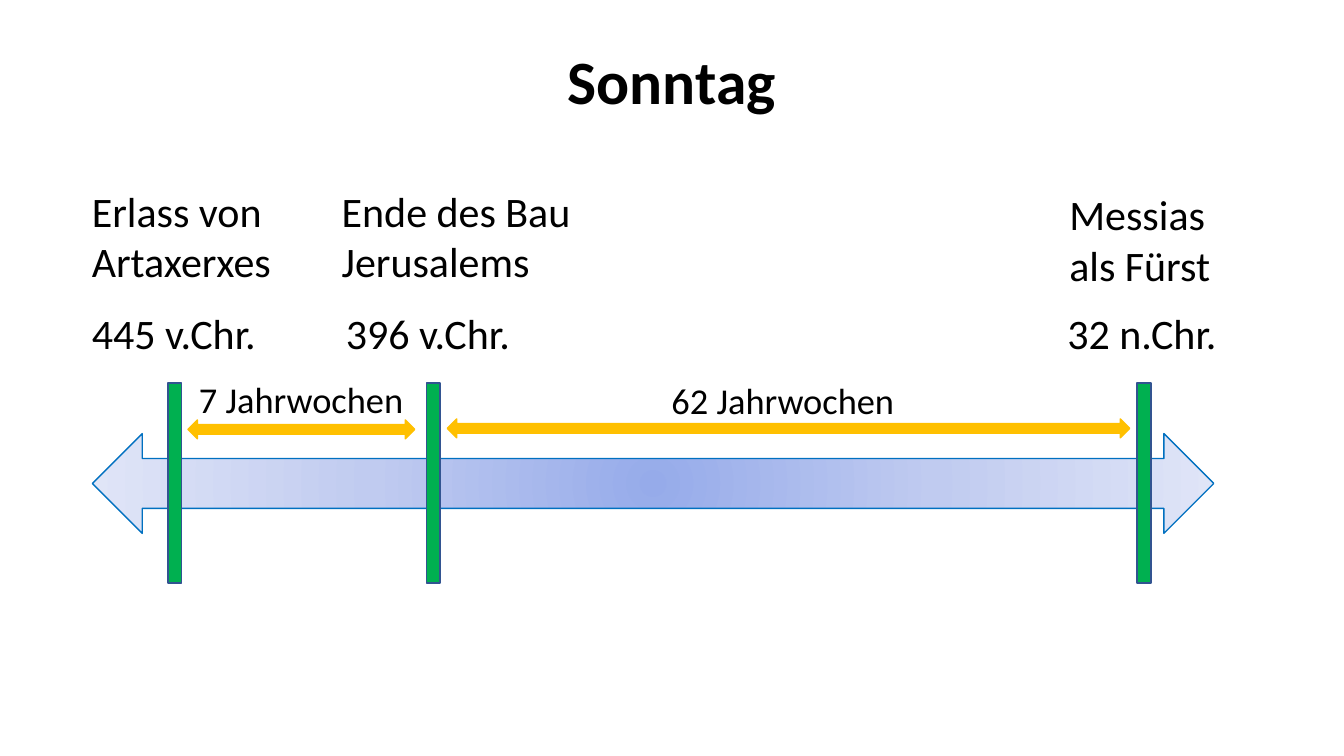
from lxml import etree
from pptx import Presentation
from pptx.dml.color import RGBColor
from pptx.enum.shapes import MSO_SHAPE
from pptx.enum.text import MSO_ANCHOR, MSO_AUTO_SIZE, PP_ALIGN
from pptx.oxml.ns import qn
from pptx.util import Emu, Pt

DOUBLE_ARROW = MSO_SHAPE.LEFT_RIGHT_ARROW
BAR = MSO_SHAPE.MATH_MINUS
MIDDLE = MSO_ANCHOR.MIDDLE
CENTER = PP_ALIGN.CENTER
FIT_TEXT = MSO_AUTO_SIZE.SHAPE_TO_FIT_TEXT

EMU_PER_PX = 9525
FONT = "Calibri"
COLORS = {
    "text": "000000",
    "timeline_line": "0070C0",
    "bar": "00B050",
    "bar_line": "325491",
    "span": "FFC000",
}
TIMELINE_STOPS = [(0, "96ABEA"), (50, "C0CBF0"), (100, "E0E5F7")]

BAR_LENGTH, BAR_DEPTH = 259, 56
BAR_CENTERS = [1089, 412, 166]
BAR_MIDDLE_Y = 460

# left, top, width, height, size in points, lines
LABELS = [
    (78, 172, 192, 107, 30, ["Erlass von", "Artaxerxes"]),
    (316, 172, 239, 107, 30, ["Ende des Bau", "Jerusalems"]),
    (1009, 175, 159, 107, 30, ["Messias", "als Fürst"]),
    (78, 288, 178, 59, 30, ["445 v.Chr."]),
    (320, 288, 178, 59, 30, ["396 v.Chr."]),
    (1007, 288, 163, 59, 30, ["32 n.Chr."]),
    (180, 354, 216, 52, 26, ["7 Jahrwochen"]),
    (630, 355, 233, 52, 26, ["62 Jahrwochen"]),
]
SPAN_ARROWS = [(426, 399, 650, 18), (179, 400, 216, 18)]


def px(*lengths):
    return [Emu(length * EMU_PER_PX) for length in lengths]


def color(name):
    return RGBColor.from_string(COLORS[name])


def add_run(para, text, size, bold=False):
    run = para.add_run()
    run.text = text
    run.font.name = FONT
    run.font.size = Pt(size)
    run.font.bold = bold
    run.font.color.rgb = color("text")


def set_title(page, text):
    title = page.shapes.title
    title.left, title.top, title.width, title.height = px(88, 38, 1104, 85)
    title.text_frame.vertical_anchor = MIDDLE
    para = title.text_frame.paragraphs[0]
    para.alignment = CENTER
    para.line_spacing = 0.9
    add_run(para, text, 44, bold=True)


def add_label(page, left, top, width, height, size, lines):
    box = page.shapes.add_textbox(*px(left, top, width, height))
    frame = box.text_frame
    frame.word_wrap = False
    frame.auto_size = FIT_TEXT
    for index, line in enumerate(lines):
        para = frame.add_paragraph() if index else frame.paragraphs[0]
        add_run(para, line, size)


def add_outlined_shape(page, kind, place, fill, line):
    shape = page.shapes.add_shape(kind, *px(*place))
    shape.shadow.inherit = False
    shape.fill.solid()
    shape.fill.fore_color.rgb = color(fill)
    shape.line.color.rgb = color(line)
    shape.line.width = Pt(1)
    return shape


def set_radial_fill(shape, stops):
    """Fill with a circular gradient that starts at the shape's centre."""
    shape.fill.gradient()
    gradient = shape.element.spPr.find(qn("a:gradFill"))
    for child in list(gradient):
        gradient.remove(child)
    stop_list = etree.SubElement(gradient, qn("a:gsLst"))
    for percent, value in stops:
        stop = etree.SubElement(stop_list, qn("a:gs"), pos=str(percent * 1000))
        etree.SubElement(stop, qn("a:srgbClr"), val=value)
    circle = etree.SubElement(gradient, qn("a:path"), path="circle")
    etree.SubElement(circle, qn("a:fillToRect"),
                     l="50000", t="50000", r="50000", b="50000")


def add_timeline(page):
    timeline = add_outlined_shape(page, DOUBLE_ARROW, (88, 413, 1068, 95),
                                  "timeline_line", "timeline_line")
    set_radial_fill(timeline, TIMELINE_STOPS)


def add_bar(page, center):
    place = (center - BAR_LENGTH // 2, BAR_MIDDLE_Y - BAR_DEPTH // 2,
             BAR_LENGTH, BAR_DEPTH)
    bar = add_outlined_shape(page, BAR, place, "bar", "bar_line")
    bar.rotation = 90


def main():
    deck = Presentation()
    deck.slide_width, deck.slide_height = px(1280, 720)
    page = deck.slides.add_slide(deck.slide_layouts[5])
    set_title(page, "Sonntag")
    add_timeline(page)
    for center in BAR_CENTERS:
        add_bar(page, center)
    for place in SPAN_ARROWS:
        add_outlined_shape(page, DOUBLE_ARROW, place, "span", "span")
    for label in LABELS:
        add_label(page, *label)
    deck.save("out.pptx")


if __name__ == "__main__":
    main()
